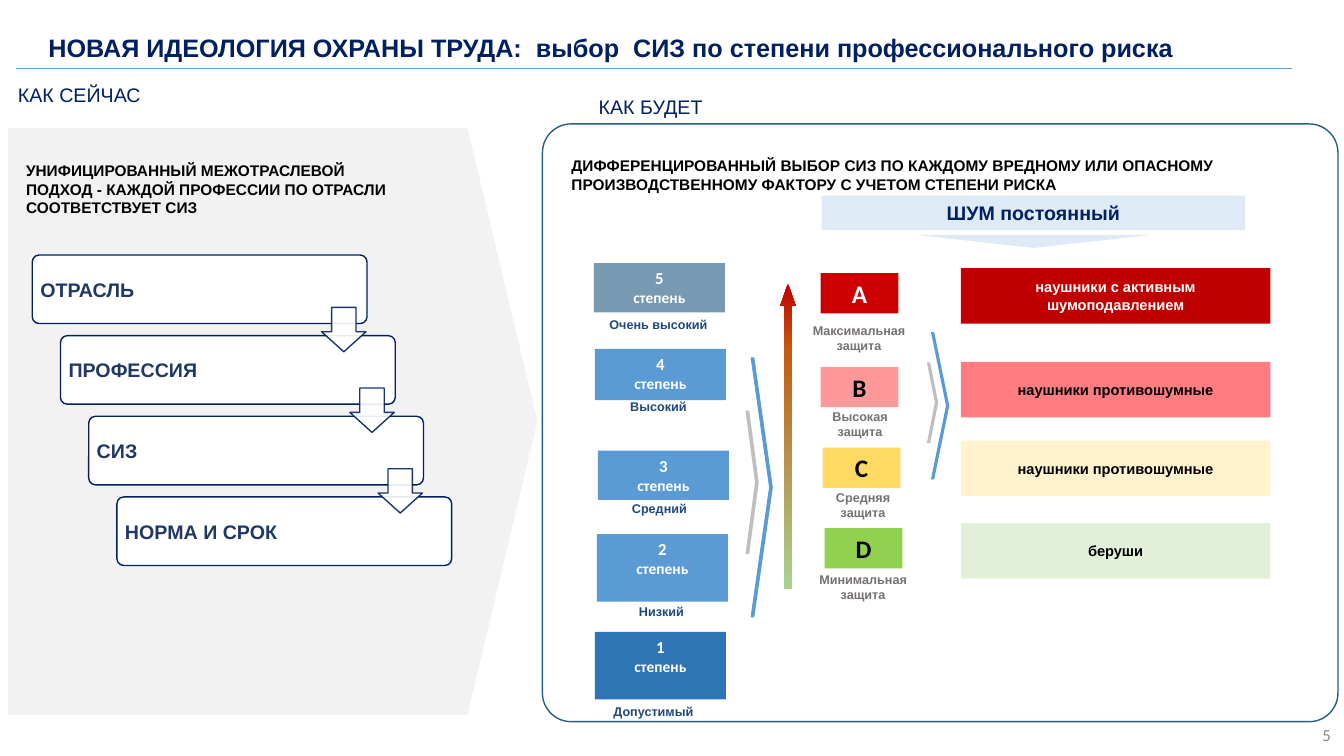
import pptx
import pptx.util
import pptx.dml.color
import pptx.enum.shapes
import pptx.enum.text
import pptx.oxml
import pptx.oxml.ns
import lxml.etree

Inches = pptx.util.Inches
Pt = pptx.util.Pt
KIND = pptx.enum.shapes.MSO_SHAPE
ALIGN = pptx.enum.text.PP_ALIGN
ANCHOR = pptx.enum.text.MSO_ANCHOR
qn = pptx.oxml.ns.qn

NAVY, INK, BLUE, GREY = "002060", "000000", "5B9BD5", "BFBFBF"
WHITE, DEEP, DIM, PALE = "FFFFFF", "1F497D", "767171", "DEEBF7"


def tint(code):
    return pptx.dml.color.RGBColor.from_string(code)


class Deck:
    """Holds the text style and the current slide."""

    font = "Arial"

    def __init__(self):
        self.show = pptx.Presentation()
        self.show.slide_width = Inches(13.33)
        self.show.slide_height = Inches(7.5)
        self.page = self.show.slides.add_slide(self.show.slide_layouts[5])

    def label(self, frame, text, size, hue, bold=True, align=ALIGN.LEFT,
              anchor=ANCHOR.TOP, font=None):
        frame.text = text
        frame.word_wrap = True
        frame.auto_size = pptx.enum.text.MSO_AUTO_SIZE.NONE
        frame.vertical_anchor = anchor
        for para in frame.paragraphs:
            para.alignment = align
            for run in para.runs:
                run.font.name = font or self.font
                run.font.size = Pt(size)
                run.font.bold = bold
                run.font.color.rgb = tint(hue)

    def title(self, box, text, size, hue):
        head = self.page.shapes.title
        head.left, head.top, head.width, head.height = map(Inches, box)
        self.label(head.text_frame, text, size, hue)

    def text(self, box, text, size, hue, **style):
        area = self.page.shapes.add_textbox(*map(Inches, box))
        self.label(area.text_frame, text, size, hue, **style)

    def shape(self, kind, box, fill=None, line=None, width=1, adj=()):
        form = self.page.shapes.add_shape(kind, *map(Inches, box))
        form.shadow.inherit = False
        for spot, value in enumerate(adj):
            form.adjustments[spot] = value
        if fill:
            form.fill.solid()
            form.fill.fore_color.rgb = tint(fill)
        else:
            form.fill.background()
        if line:
            form.line.color.rgb = tint(line)
            form.line.width = Pt(width)
        else:
            form.line.fill.background()
        return form

    def block(self, box, fill, text, size, hue, **style):
        form = self.shape(KIND.RECTANGLE, box, fill)
        self.label(form.text_frame, text, size, hue, align=ALIGN.CENTER, **style)
        return form

    def rule(self, left, top, right, hue, width):
        line = self.page.shapes.add_connector(
            pptx.enum.shapes.MSO_CONNECTOR.STRAIGHT,
            Inches(left), Inches(top), Inches(right), Inches(top))
        line.line.color.rgb = tint(hue)
        line.line.width = Pt(width)
        lxml.etree.SubElement(line._element.spPr, qn("a:effectLst"))

    def fade(self, form, stops):
        """Fill a shape from top to bottom through the given stops."""
        form.fill.gradient()
        form.fill.gradient_angle = 270
        rows = form._element.spPr.find(qn("a:gradFill")).find(qn("a:gsLst"))
        for old in list(rows):
            rows.remove(old)
        for place, hue in stops:
            stop = lxml.etree.SubElement(rows, qn("a:gs"), pos=str(place * 1000))
            lxml.etree.SubElement(stop, qn("a:srgbClr"), val=hue)

    def clear(self, form, share):
        """Set the opacity of fill and line in percent."""
        for node in form._element.spPr.iter(qn("a:srgbClr")):
            lxml.etree.SubElement(node, qn("a:alpha"), val=str(share * 1000))


def main():
    deck = Deck()

    # Panels and headings
    deck.shape(KIND.PENTAGON, (0.08, 1.27, 5.25, 5.82), "F2F2F2", adj=[0.132])
    deck.shape(KIND.ROUNDED_RECTANGLE, (5.38, 1.23, 7.89, 5.93),
               line="295E7E", adj=[0.048])
    deck.title((0.38, 0.27, 12.9, 0.4),
               "НОВАЯ ИДЕОЛОГИЯ ОХРАНЫ ТРУДА:  выбор  СИЗ по степени "
               "профессионального риска", 18, NAVY)
    deck.rule(0.16, 0.68, 12.81, BLUE, 0.5)
    deck.text((0.08, 0.77, 3.13, 0.34), "КАК СЕЙЧАС", 14, NAVY, bold=False)
    deck.text((5.84, 0.89, 3.13, 0.34), "КАК БУДЕТ", 14, NAVY, bold=False)
    deck.text((0.16, 1.55, 3.94, 0.66),
              "УНИФИЦИРОВАННЫЙ МЕЖОТРАСЛЕВОЙ ПОДХОД - КАЖДОЙ ПРОФЕССИИ "
              "ПО ОТРАСЛИ СООТВЕТСТВУЕТ СИЗ", 11, INK)
    deck.text((5.57, 1.5, 7.24, 0.47),
              "ДИФФЕРЕНЦИРОВАННЫЙ ВЫБОР СИЗ ПО КАЖДОМУ ВРЕДНОМУ ИЛИ ОПАСНОМУ "
              "ПРОИЗВОДСТВЕННОМУ ФАКТОРУ С УЧЕТОМ СТЕПЕНИ РИСКА", 11, INK)

    # Staircase of steps, then the arrows over it
    steps = ["ОТРАСЛЬ", "ПРОФЕССИЯ", "СИЗ", "НОРМА И СРОК"]
    spots = [(0.32 + 0.28 * i, 2.53 + 0.8 * i) for i in range(len(steps))]
    for (left, top), name in zip(spots, steps):
        card = deck.shape(KIND.ROUNDED_RECTANGLE, (left, top, 3.32, 0.68),
                          WHITE, NAVY, adj=[0.1])
        deck.label(card.text_frame, name, 14, "203864", anchor=ANCHOR.MIDDLE)
        card.text_frame.margin_left = Inches(0.06)
    for left, top in spots[:-1]:
        arrow = deck.shape(KIND.DOWN_ARROW, (left + 2.87, top + 0.52, 0.44, 0.44),
                           WHITE, NAVY, adj=[0.55, 0.45])
        deck.clear(arrow, 90)

    # Risk levels: number, fill, left, top, height, name, name centre and top
    levels = [
        (5, "7799B2", 5.89, 2.61, 0.49, "Очень высокий", 6.53, 3.09),
        (4, BLUE, 5.9, 3.46, 0.51, "Высокий", 6.53, 3.91),
        (3, BLUE, 5.93, 4.47, 0.49, "Средний", 6.54, 4.92),
        (2, BLUE, 5.92, 5.3, 0.67, "Низкий", 6.56, 5.94),
        (1, "2E75B6", 5.9, 6.27, 0.67, "Допустимый", 6.48, 6.93),
    ]
    for rank, fill, left, top, high, name, mid, low in levels:
        box = deck.block((left, top, 1.3, high), fill, f"{rank}\nстепень",
                         12, WHITE, font="Calibri")
        box.text_frame.paragraphs[1].runs[0].font.size = Pt(11)
        deck.text((mid - 0.64, low, 1.28, 0.25), name, 9, DEEP,
                  align=ALIGN.CENTER)

    # Chevrons after the levels and after the grades
    for box, hue, bend in [
        ((7.4, 4.08, 0.12, 1.41), GREY, 0.781),
        ((7.45, 3.55, 0.21, 2.57), BLUE, 0.873),
        ((9.2, 3.6, 0.1, 0.79), GREY, 0.781),
        ((9.24, 3.3, 0.17, 1.45), BLUE, 0.873),
    ]:
        deck.shape(KIND.CHEVRON, box, hue, hue, 0.75, [bend])

    # Scale of protection
    scale = deck.shape(KIND.UP_ARROW, (7.74, 2.81, 0.15, 3.03), adj=[0.5, 1.477])
    deck.fade(scale, [(0, "C00000"), (22, "C55A11"), (98, "A9D18E")])

    # Grades: letter, fill, text colour, left, top, name and its box
    grades = [
        ("A", "CC0000", WHITE, 8.14, 2.71, "Максимальная защита", 7.92, 3.15, 1.2),
        ("В", "FF9999", INK, 8.14, 3.64, "Высокая защита", 8.08, 4.01, 0.9),
        ("С", "FFD961", INK, 8.16, 4.44, "Средняя защита", 8.11, 4.81, 0.9),
        ("D", "92D050", INK, 8.18, 5.24, "Минимальная\nзащита", 8, 5.62, 1.12),
    ]
    for mark, fill, hue, left, top, name, side, low, wide in grades:
        deck.block((left, top, 0.77, 0.4), fill, mark, 18, hue, font="Calibri")
        deck.text((side, low, wide, 0.4), name, 9, DIM, align=ALIGN.CENTER)

    # Noise factor and its means of protection
    deck.block((8.15, 1.94, 4.2, 0.34), PALE, "ШУМ постоянный", 14, NAVY)
    wedge = deck.shape(KIND.ISOSCELES_TRIANGLE, (9.08, 2.33, 2.34, 0.13), PALE)
    wedge.rotation = 180
    for top, fill, hue, name in [
        (2.66, "C00000", WHITE, "наушники с активным шумоподавлением"),
        (3.59, "FF7C80", INK, "наушники противошумные"),
        (4.37, "FFF2CC", INK, "наушники противошумные"),
        (5.19, "E2F0D9", INK, "беруши"),
    ]:
        deck.block((9.53, top, 3.07, 0.55), fill, name, 10.5, hue,
                   anchor=ANCHOR.MIDDLE)

    # Page number
    deck.text((10.3, 7.09, 3, 0.4), "5", 12, "898989", bold=False,
              align=ALIGN.RIGHT, anchor=ANCHOR.MIDDLE, font="Calibri")

    deck.show.save("out.pptx")


if __name__ == "__main__":
    main()
